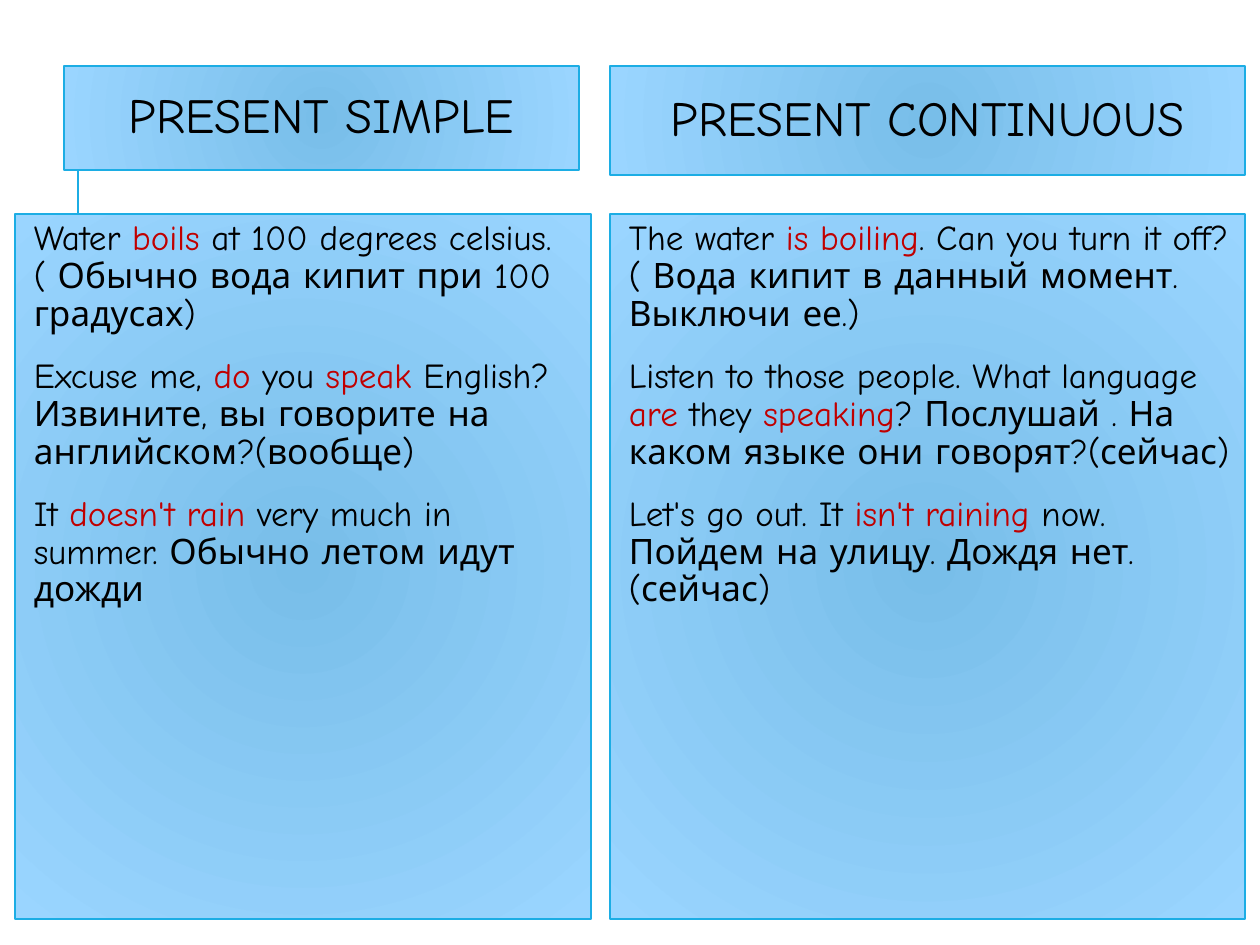
from lxml.etree import SubElement
from pptx import Presentation
from pptx.dml.color import RGBColor
from pptx.enum.shapes import MSO_CONNECTOR
from pptx.enum.text import MSO_ANCHOR, MSO_AUTO_SIZE, PP_ALIGN
from pptx.oxml.ns import qn
from pptx.util import Emu, Pt

PX = 914400 // 126
FONT = "Comic Neue"
COLORS = {"center": "78BEE9", "edge": "9AD5FF", "line": "1CADE4",
          "text": "000000", "verb": "C00000"}

# Each sentence alternates plain text and highlighted verb forms.
COLUMNS = [
    {"heading": "PRESENT SIMPLE",
     "heading_box": (64, 66, 515, 104),
     "body_box": (15, 214, 576, 705),
     "sentences": [
         ("Water ", "boils ",
          "at 100 degrees celsius.( Обычно вода кипит при 100 градусах)"),
         ("Excuse me, ", "do ", "you ", "speak ",
          "English? Извините, вы говорите на английском?(вообще)"),
         ("It ", "doesn't rain",
          " very much in summer. Обычно летом идут дожди"),
     ]},
    {"heading": "PRESENT CONTINUOUS",
     "heading_box": (610, 66, 635, 109),
     "body_box": (610, 214, 635, 705),
     "sentences": [
         ("The water ", "is boiling",
          ". Can you turn it off? ( Вода кипит в данный момент. Выключи ее.)"),
         ("Listen to those people. What language ", "are", " they ", "speaking",
          "? Послушай . На каком языке они говорят?(сейчас)"),
         ("Let's go out. It ", "isn't raining",
          " now. Пойдем на улицу. Дождя нет.(сейчас)"),
     ]},
]
RULE = (78, 239, 78, 113)


def px(*values):
    return [Emu(v * PX) for v in values]


def rgb(name):
    return RGBColor.from_string(COLORS[name])


def style_box(sp, box, side_inset, anchor):
    sp.left, sp.top, sp.width, sp.height = px(*box)
    sp.fill.gradient()
    for stop, name in zip(sp.fill.gradient_stops, ("center", "edge")):
        stop.color.rgb = rgb(name)
    grad = sp._element.spPr.find(qn("a:gradFill"))
    grad.remove(grad.find(qn("a:lin")))
    path = SubElement(grad, qn("a:path"), path="circle")
    SubElement(path, qn("a:fillToRect"), dict.fromkeys("ltrb", "100000"))
    sp.line.color.rgb = rgb("line")
    sp.line.width = Pt(0.75)
    tf = sp.text_frame
    tf.word_wrap = True
    tf.auto_size = MSO_AUTO_SIZE.NONE
    tf.vertical_anchor = anchor
    tf.margin_left = tf.margin_right = Pt(side_inset)
    tf.margin_top = tf.margin_bottom = Pt(3.6)
    return tf


def add_run(p, text, size, color):
    r = p.add_run()
    r.text = text
    r.font.name, r.font.size, r.font.bold = FONT, Pt(size), False
    r.font.color.rgb = rgb(color)


def set_blank_bullet(p):
    pPr = p._p.get_or_add_pPr()
    pPr.set("marL", "91440")
    pPr.set("indent", "-91440")
    color = SubElement(pPr, qn("a:buClr"))
    SubElement(color, qn("a:srgbClr"), val=COLORS["line"])
    SubElement(pPr, qn("a:buChar"), char=" ")


def fill_heading(sp, column):
    tf = style_box(sp, column["heading_box"], 10.8, MSO_ANCHOR.MIDDLE)
    p = tf.paragraphs[0]
    p.alignment = PP_ALIGN.CENTER
    p.line_spacing = 0.9
    p.space_before = Pt(0)
    add_run(p, column["heading"], 28, "text")


def fill_body(sp, column):
    tf = style_box(sp, column["body_box"], 3.6, MSO_ANCHOR.TOP)
    for i, sentence in enumerate(column["sentences"]):
        p = tf.add_paragraph() if i else tf.paragraphs[0]
        p.line_spacing = 0.9
        p.space_before, p.space_after = Pt(12), Pt(2)
        set_blank_bullet(p)
        for j, text in enumerate(sentence):
            add_run(p, text, 20, "verb" if j % 2 else "text")


def add_rule(s):
    line = s.shapes.add_connector(MSO_CONNECTOR.STRAIGHT, *px(*RULE))
    line.line.color.rgb = rgb("line")
    line.line.width = Pt(1.5)
    SubElement(line._element.spPr, qn("a:effectLst"))
    s.shapes._spTree.insert(2, line._element)  # behind the boxes


def main():
    prs = Presentation()
    prs.slide_width, prs.slide_height = px(1260, 945)
    s = prs.slides.add_slide(prs.slide_layouts.get_by_name("Comparison"))
    title, *boxes = list(s.placeholders)[:5]
    title._element.getparent().remove(title._element)
    for sp in list(s.placeholders)[4:]:
        sp._element.getparent().remove(sp._element)
    for column, heading, body in zip(COLUMNS, boxes[::2], boxes[1::2]):
        fill_heading(heading, column)
        fill_body(body, column)
    add_rule(s)
    prs.save("out.pptx")


if __name__ == "__main__":
    main()
